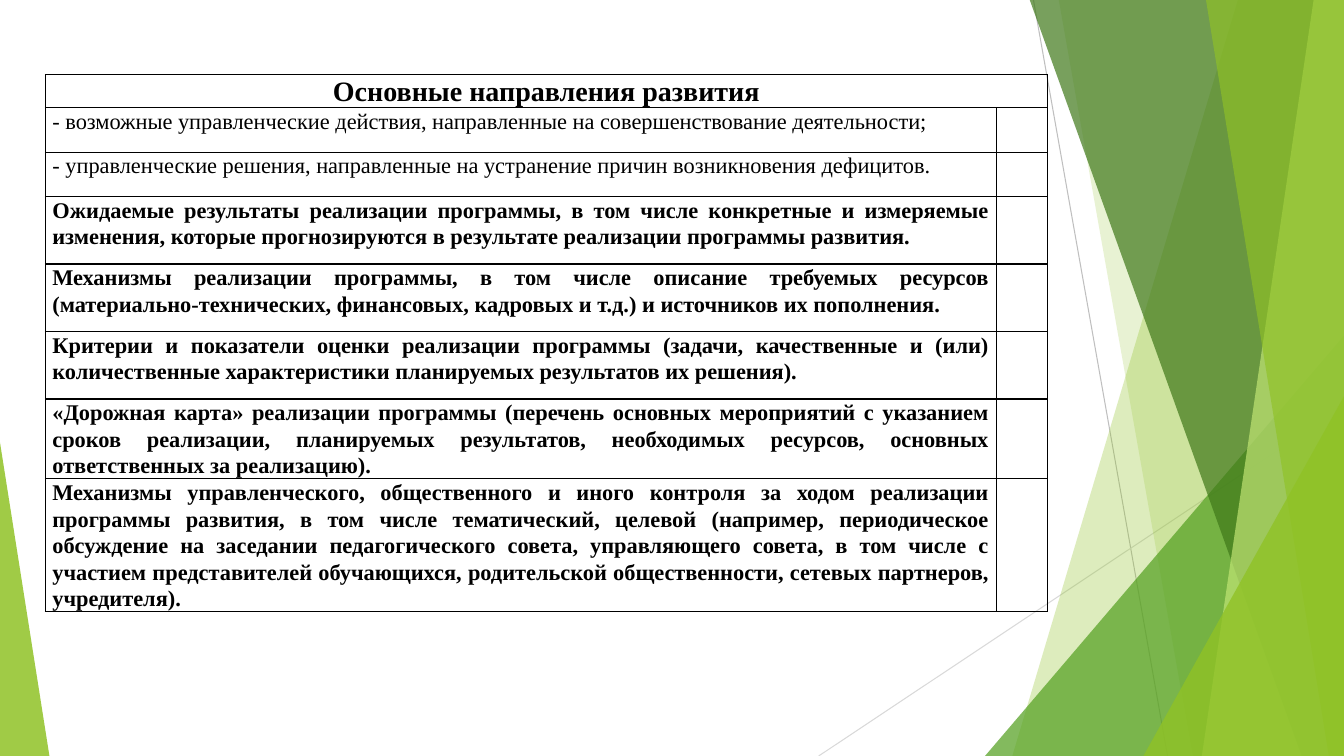
"""Builds a slide with a table of development directions beside green facets."""
from dataclasses import dataclass

from lxml.etree import SubElement
from pptx import Presentation
from pptx.dml.color import RGBColor
from pptx.enum.shapes import MSO_CONNECTOR as Connector, MSO_SHAPE as Shape
from pptx.enum.text import MSO_ANCHOR as Anchor, PP_ALIGN as Align
from pptx.oxml.ns import qn
from pptx.util import Inches, Pt


@dataclass(frozen=True)
class Theme:
    font: str = "Times New Roman"
    heading_size: int = 20
    body_size: int = 16
    text: str = "000000"
    border: str = "000000"
    steep_line: str = "BFBFBF"
    shallow_line: str = "D9D9D9"
    lime: str = "90C226"
    pale_lime: str = "C0E474"
    green: str = "54A021"
    dark_green: str = "3F7819"


theme = Theme()
WIDTH, HEIGHT, TOP = 13.33, 7.5, -0.01


def paint(shape, color, opacity):
    shape.shadow.inherit = False
    shape.line.fill.background()
    shape.fill.solid()
    shape.fill.fore_color.rgb = RGBColor.from_string(color)
    color_node = shape.fill._xPr.find(qn("a:solidFill"))[0]
    SubElement(color_node, qn("a:alpha"), val=str(opacity * 1000))


def add_borders(cell):
    properties = cell._tc.get_or_add_tcPr()
    for side in ("L", "R", "T", "B"):
        line = SubElement(properties, qn(f"a:ln{side}"), w=str(Pt(1)))
        fill = SubElement(line, qn("a:solidFill"))
        SubElement(fill, qn("a:srgbClr"), val=theme.border)


presentation = Presentation()
presentation.slide_width = Inches(WIDTH)
presentation.slide_height = Inches(HEIGHT)
slide = presentation.slides.add_slide(presentation.slide_layouts[6])

thin_lines = [
    (10.25, 0, 11.58, HEIGHT, theme.steep_line),
    (WIDTH, 4.03, 8.12, HEIGHT, theme.shallow_line),
]
for *ends, color in thin_lines:
    connector = slide.shapes.add_connector(Connector.STRAIGHT, *map(Inches, ends))
    connector.line.width = Pt(0.75)
    connector.line.color.rgb = RGBColor.from_string(color)
    SubElement(connector._element.spPr, qn("a:effectLst"))

facets = [
    ("band", (12.28, 10.04), theme.lime, 30),
    ("band", (10.5, 11.83), theme.lime, 20),
    ("triangle", (9.77, 3.33, 3.56, 1), theme.green, 72),
    ("band", (10.21, 12.91), theme.dark_green, 70),
    ("band", (13.03, 11.92), theme.pale_lime, 70),
    ("band", (11.96, 13.18), theme.lime, 65),
    ("triangle", (11.34, 3.93, 1.99, 1), theme.lime, 80),
    ("triangle", (0, 4.39, 0.49, 0), theme.lime, 85),
]
for kind, geometry, color, opacity in facets:
    if kind == "band":
        top_x, bottom_x = geometry
        builder = slide.shapes.build_freeform(Inches(top_x), Inches(TOP))
        corners = [(WIDTH, TOP), (WIDTH, HEIGHT), (bottom_x, HEIGHT)]
        builder.add_line_segments([(Inches(x), Inches(y)) for x, y in corners])
        facet = builder.convert_to_shape()
    else:
        left, top, width, apex = geometry
        facet = slide.shapes.add_shape(
            Shape.ISOSCELES_TRIANGLE,
            Inches(left), Inches(top), Inches(width), Inches(HEIGHT - top),
        )
        facet.adjustments[0] = apex
    paint(facet, color, opacity)

rows = [
    (0.27, True, "Основные направления развития"),
    (0.44, False, "- возможные управленческие действия, направленные на "
     "совершенствование деятельности;"),
    (0.44, False, "- управленческие решения, направленные на устранение "
     "причин возникновения дефицитов."),
    (0.67, True, "Ожидаемые результаты реализации программы, в том числе "
     "конкретные и измеряемые изменения, которые прогнозируются в результате "
     "реализации программы развития."),
    (0.67, True, "Механизмы реализации программы, в том числе описание "
     "требуемых ресурсов (материально-технических, финансовых, кадровых и т.д.) "
     "и источников их пополнения."),
    (0.67, True, "Критерии и показатели оценки реализации программы (задачи, "
     "качественные и (или) количественные характеристики планируемых "
     "результатов их решения)."),
    (0.67, True, "«Дорожная карта» реализации программы (перечень основных "
     "мероприятий с указанием сроков реализации, планируемых результатов, "
     "необходимых ресурсов, основных ответственных за реализацию)."),
    (1.16, True, "Механизмы управленческого, общественного и иного контроля за "
     "ходом реализации программы развития, в том числе тематический, целевой "
     "(например, периодическое обсуждение на заседании педагогического совета, "
     "управляющего совета, в том числе с участием представителей обучающихся, "
     "родительской общественности, сетевых партнеров, учредителя)."),
]
column_widths = [9.43, 0.51]
table = slide.shapes.add_table(
    len(rows), len(column_widths), Inches(0.45), Inches(0.74),
    Inches(sum(column_widths)), Inches(sum(row[0] for row in rows)),
).table
table.first_row = table.horz_banding = False
for column, width in zip(table.columns, column_widths):
    column.width = Inches(width)

for cell in table.iter_cells():
    add_borders(cell)
    cell.fill.background()
    cell.margin_left = cell.margin_right = Inches(0.07)
    cell.margin_top = cell.margin_bottom = 0
    cell.vertical_anchor = Anchor.TOP
table.cell(0, 0).merge(table.cell(0, 1))

for index, (height, bold, text) in enumerate(rows):
    is_heading = index == 0
    table.rows[index].height = Inches(height)
    paragraph = table.cell(index, 0).text_frame.paragraphs[0]
    paragraph.alignment = Align.CENTER if is_heading else Align.JUSTIFY
    paragraph.line_spacing = 1.07
    paragraph.space_after = Pt(8)
    run = paragraph.add_run()
    run.text = text
    run.font.name = theme.font
    run.font.size = Pt(theme.heading_size if is_heading else theme.body_size)
    run.font.bold = bold
    run.font.color.rgb = RGBColor.from_string(theme.text)

presentation.save("out.pptx")
